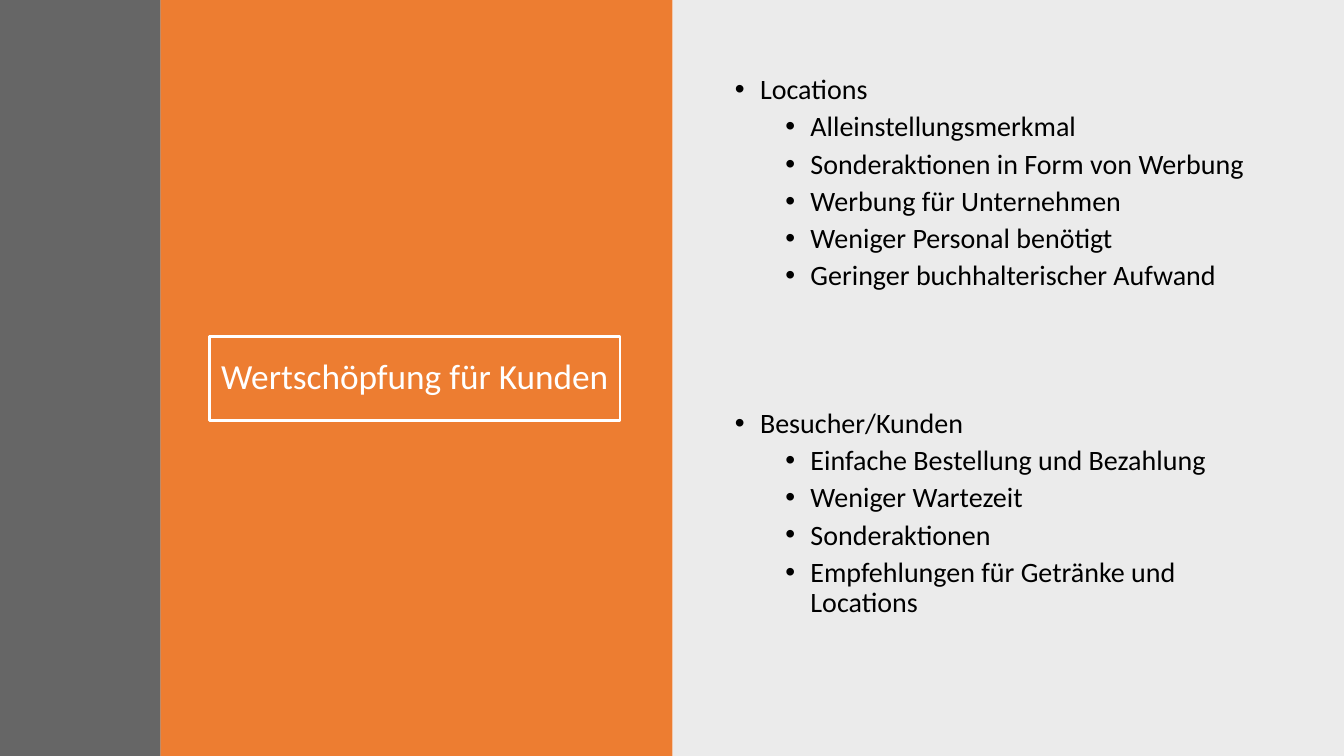
from dataclasses import dataclass

from lxml import etree
from pptx import Presentation
from pptx.dml.color import RGBColor
from pptx.enum.shapes import MSO_SHAPE
from pptx.enum.text import MSO_ANCHOR, PP_ALIGN
from pptx.oxml.ns import qn
from pptx.util import Inches, Pt

RECTANGLE = MSO_SHAPE.RECTANGLE
CENTER = PP_ALIGN.CENTER
MIDDLE = MSO_ANCHOR.MIDDLE


@dataclass(frozen=True)
class Theme:
    font: str = "Calibri"
    title_size: float = 25.2
    body_size: float = 20
    line_spacing: float = 0.9
    black: RGBColor = RGBColor(0x00, 0x00, 0x00)
    white: RGBColor = RGBColor(0xFF, 0xFF, 0xFF)
    orange: RGBColor = RGBColor(0xED, 0x7D, 0x31)
    gray: RGBColor = RGBColor(0x40, 0x40, 0x40)


THEME = Theme()
SLIDE_WIDTH, SLIDE_HEIGHT = 13.33, 7.5
GRAY_EDGE, ORANGE_EDGE = 1.59, 6.67

BENEFITS = {
    "Locations": [
        "Alleinstellungsmerkmal",
        "Sonderaktionen in Form von Werbung",
        "Werbung für Unternehmen",
        "Weniger Personal benötigt",
        "Geringer buchhalterischer Aufwand",
    ],
    "Besucher/Kunden": [
        "Einfache Bestellung und Bezahlung",
        "Weniger Wartezeit",
        "Sonderaktionen",
        "Empfehlungen für Getränke und Locations",
    ],
}
LISTS_TOP, LISTS_STEP = 0.7, 3.31


def add_panel(slide, left, right, color, opacity=100):
    """Add a full-height colour band; opacity is in percent."""
    panel = slide.shapes.add_shape(
        RECTANGLE, Inches(left), 0, Inches(right - left), Inches(SLIDE_HEIGHT))
    panel.shadow.inherit = False
    panel.line.fill.background()
    panel.fill.solid()
    panel.fill.fore_color.rgb = color
    if opacity < 100:
        color_node = panel.fill._xPr.find(qn("a:solidFill"))[0]
        etree.SubElement(color_node, qn("a:alpha"), val=str(opacity * 1000))


def add_text(paragraph, text, size, color):
    paragraph.line_spacing = THEME.line_spacing
    run = paragraph.add_run()
    run.text = text
    run.font.name = THEME.font
    run.font.size = Pt(size)
    run.font.color.rgb = color


def add_title(slide, text):
    title = slide.shapes.add_shape(
        RECTANGLE, Inches(2.08), Inches(3.34), Inches(4.07), Inches(0.83))
    title.shadow.inherit = False
    title.fill.background()
    title.line.color.rgb = THEME.white
    title.line.width = Pt(2)
    frame = title.text_frame
    frame.word_wrap = False
    frame.vertical_anchor = MIDDLE
    paragraph = frame.paragraphs[0]
    paragraph.alignment = CENTER
    add_text(paragraph, text, THEME.title_size, THEME.white)


def add_bullet(paragraph, text, level):
    paragraph.level = level
    paragraph.space_before = Pt(5 if level else 10)
    add_text(paragraph, text, THEME.body_size, THEME.black)
    properties = paragraph._p.get_or_add_pPr()
    properties.set("marL", str(Inches(0.25 + 0.5 * level)))
    properties.set("indent", str(Inches(-0.25)))
    etree.SubElement(properties, qn("a:buFont"), typeface="Arial")
    etree.SubElement(properties, qn("a:buChar"), char="•")


def add_benefit_list(slide, top, audience, benefits):
    box = slide.shapes.add_textbox(
        Inches(7.19), Inches(top), Inches(5.53), Inches(2.79))
    frame = box.text_frame
    frame.word_wrap = True
    add_bullet(frame.paragraphs[0], audience, 0)
    for benefit in benefits:
        add_bullet(frame.add_paragraph(), benefit, 1)


def main():
    presentation = Presentation()
    presentation.slide_width = Inches(SLIDE_WIDTH)
    presentation.slide_height = Inches(SLIDE_HEIGHT)
    slide = presentation.slides.add_slide(presentation.slide_layouts[6])

    add_panel(slide, ORANGE_EDGE, SLIDE_WIDTH, THEME.black, opacity=8)
    add_panel(slide, GRAY_EDGE, ORANGE_EDGE, THEME.orange)
    add_title(slide, "Wertschöpfung für Kunden")
    add_panel(slide, 0, GRAY_EDGE, THEME.gray, opacity=80)
    for index, (audience, benefits) in enumerate(BENEFITS.items()):
        add_benefit_list(slide, LISTS_TOP + index * LISTS_STEP, audience, benefits)

    presentation.save("out.pptx")


if __name__ == "__main__":
    main()
